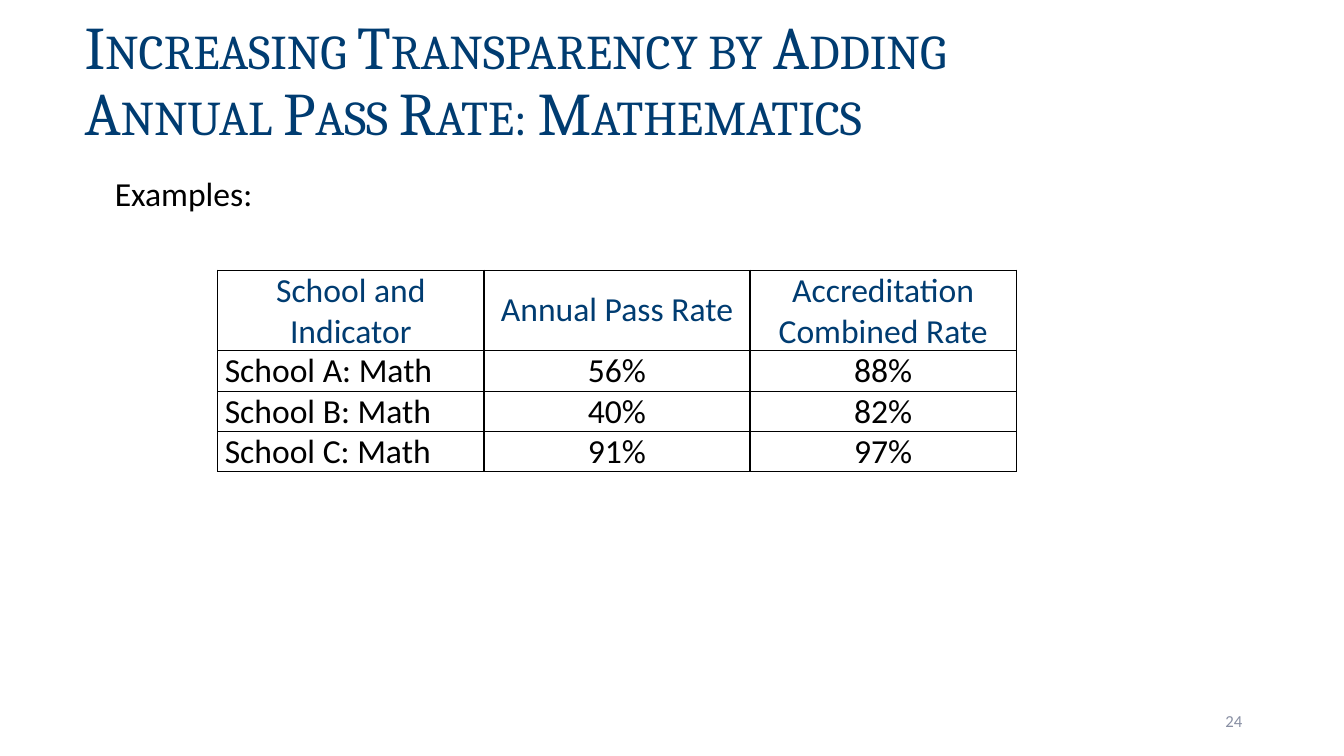
from lxml import etree
from pptx import Presentation
from pptx import util as u
from pptx.dml.color import RGBColor
from pptx.enum import text
from pptx.oxml.ns import qn

COLORS = {"navy": "003C71", "black": "000000", "gray": "888FA3"}
COLUMN_WIDTH = u.Inches(2.64)
ROW_HEIGHT = u.Inches(0.38)
ROWS = [
    ("School and Indicator", "Annual Pass Rate", "Accreditation Combined Rate"),
    ("School A: Math", "56%", "88%"),
    ("School B: Math", "40%", "82%"),
    ("School C: Math", "91%", "97%"),
]


def style(paragraph, size, color, name="Calibri", align=text.PP_ALIGN.LEFT):
    paragraph.alignment = align
    paragraph.font.name = name
    paragraph.font.size = u.Pt(size)
    paragraph.font.color.rgb = RGBColor.from_string(COLORS[color])


def add_text(box, content, anchor):
    """Add a wrapping text box at box (inches) and return its first paragraph."""
    shape = slide.shapes.add_textbox(*map(u.Inches, box))
    shape.text_frame.word_wrap = True
    shape.text_frame.vertical_anchor = anchor
    shape.text_frame.text = content
    return shape.text_frame.paragraphs[0]


presentation = Presentation()
presentation.slide_width = u.Inches(13.33)
presentation.slide_height = u.Inches(7.5)
slide = presentation.slides.add_slide(presentation.slide_layouts[6])

# Title in small caps
title = add_text((0.74, 0.07, 12.53, 1.45),
                 "Increasing Transparency by Adding\vAnnual Pass Rate: Mathematics",
                 text.MSO_ANCHOR.BOTTOM)
style(title, 43.2, "navy", "Cambria")
title.line_spacing = 0.9
for run in title.runs:
    run._r.get_or_add_rPr().set("cap", "small")

# Page number
page_number = add_text((9.42, 6.95, 3, 0.4), "24", text.MSO_ANCHOR.MIDDLE)
style(page_number, 12, "gray", align=text.PP_ALIGN.RIGHT)

# Pass rate table
table = slide.shapes.add_table(
    len(ROWS), len(ROWS[0]), u.Inches(2.16), u.Inches(2.68),
    COLUMN_WIDTH * len(ROWS[0]), ROW_HEIGHT * (len(ROWS) + 1)).table
table.first_row = table.horz_banding = False
for column in table.columns:
    column.width = COLUMN_WIDTH
for row_index, values in enumerate(ROWS):
    is_header = row_index == 0
    table.rows[row_index].height = ROW_HEIGHT * (2 if is_header else 1)
    for column_index, value in enumerate(values):
        cell = table.cell(row_index, column_index)
        cell.text = value
        cell.vertical_anchor = text.MSO_ANCHOR.MIDDLE
        cell.margin_left = cell.margin_right = u.Inches(0.07)
        cell.margin_top = cell.margin_bottom = 0
        is_label = column_index == 0 and not is_header
        style(cell.text_frame.paragraphs[0], 24, "navy" if is_header else "black",
              align=text.PP_ALIGN.LEFT if is_label else text.PP_ALIGN.CENTER)
        properties = cell._tc.get_or_add_tcPr()
        for side in ("a:lnL", "a:lnR", "a:lnT", "a:lnB"):
            border = etree.SubElement(properties, qn(side), w=str(u.Pt(1)))
            border_fill = etree.SubElement(border, qn("a:solidFill"))
            etree.SubElement(border_fill, qn("a:srgbClr"), val=COLORS["black"])
        cell.fill.background()

# Lead-in above the table
lead_in = add_text((0.92, 1.71, 11.5, 0.58), "Examples:", text.MSO_ANCHOR.TOP)
style(lead_in, 24, "black")
lead_in.line_spacing = 0.9
lead_in.space_before = u.Pt(10)
lead_in._p.get_or_add_pPr().set("marL", str(u.Inches(0.12)))

presentation.save("out.pptx")
